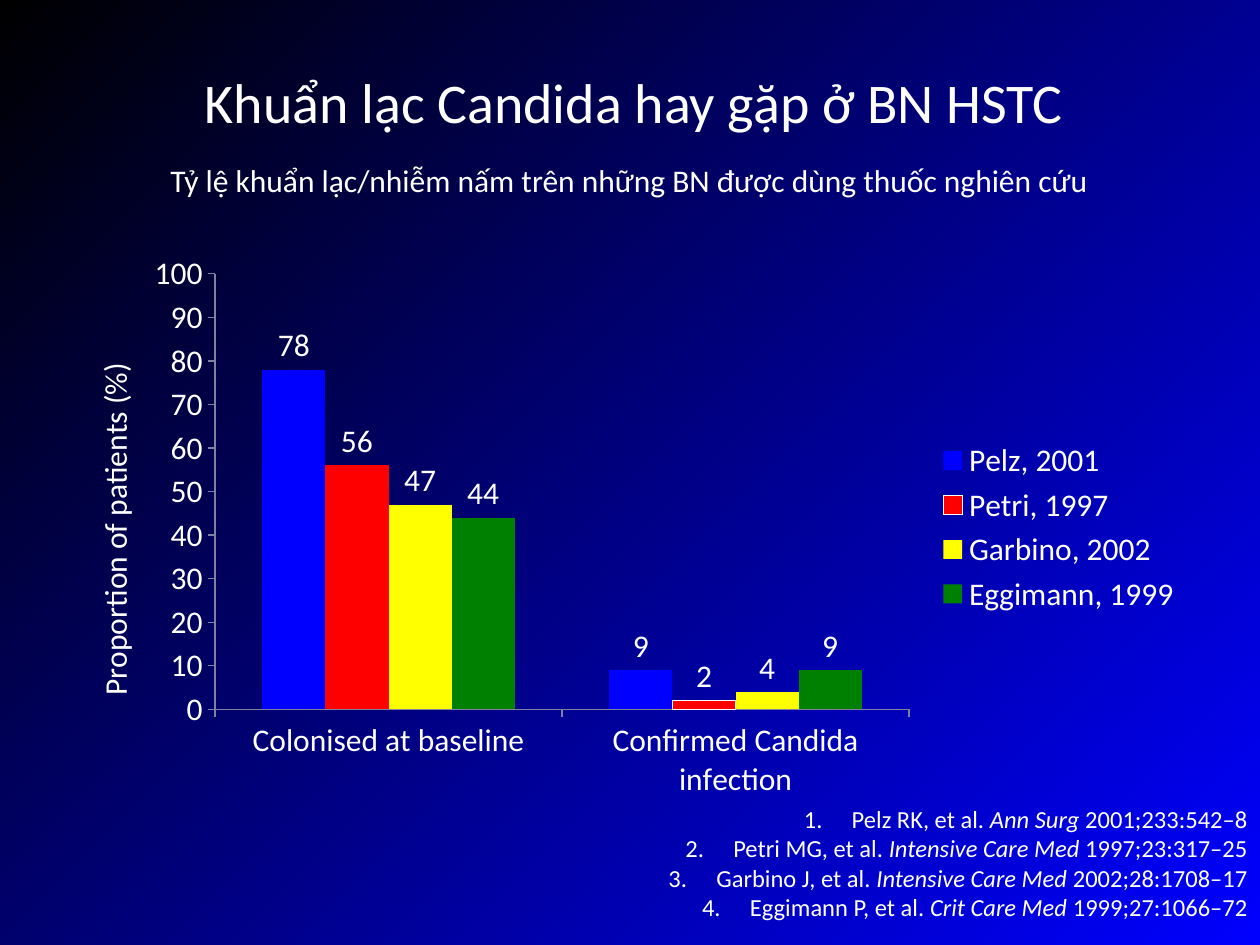
"""Build a slide on Candida colonisation with a clustered column chart."""
from lxml import etree
from pptx import Presentation
from pptx.chart import data
from pptx.dml import color
from pptx.enum import chart as ce, text as te
from pptx.oxml import ns
from pptx.util import Inches, Pt

WHITE = color.RGBColor(255, 255, 255)
BLACK = color.RGBColor(0, 0, 0)
BLUE = color.RGBColor(0, 0, 255)
RED = color.RGBColor(255, 0, 0)
YELLOW = color.RGBColor(255, 255, 0)
GREEN = color.RGBColor(0, 128, 0)
GREY = color.RGBColor(128, 128, 160)
FONT = "Calibri"
CATS = ["Colonised at baseline", "Confirmed Candida infection"]
STUDIES = [
    ("Pelz, 2001", (78, 9), BLUE),
    ("Petri, 1997", (56, 2), RED),
    ("Garbino, 2002", (47, 4), YELLOW),
    ("Eggimann, 1999", (44, 9), GREEN),
]
REFS = [
    ("Pelz RK, et al. ", "Ann Surg", " 2001;233:542–8"),
    ("Petri MG, et al. ", "Intensive Care Med", " 1997;23:317–25"),
    ("Garbino J, et al. ", "Intensive Care Med", " 2002;28:1708–17"),
    ("Eggimann P, et al. ", "Crit Care Med", " 1999;27:1066–72"),
]


def style(font, size=18):
    """Set the common white type."""
    font.name, font.size, font.bold = FONT, Pt(size), False
    font.color.rgb = WHITE


def put(para, words, size=18, align=te.PP_ALIGN.CENTER, italic=None):
    """Add a formatted run to a paragraph."""
    para.alignment = align
    run = para.add_run()
    run.text = words
    style(run.font, size)
    run.font.italic = italic


def place(shape, left, top, width, height):
    """Move and size a shape in inches."""
    shape.left, shape.top = Inches(left), Inches(top)
    shape.width, shape.height = Inches(width), Inches(height)


def add_box(slide, *area):
    """Add a wrapping text box and return its frame."""
    frame = slide.shapes.add_textbox(*map(Inches, area)).text_frame
    frame.word_wrap = True
    return frame


def paint(slide):
    """Spread blue from the lower right corner into black."""
    fill = slide.background.fill
    fill.gradient()
    for stop, rgb in zip(fill.gradient_stops, (BLUE, BLACK)):
        stop.color.rgb = rgb
    grad = slide.element.find(".//" + ns.qn("a:gradFill"))
    grad.remove(grad.find(ns.qn("a:lin")))
    shade = etree.SubElement(grad, ns.qn("a:path"), {"path": "circle"})
    etree.SubElement(shade, ns.qn("a:fillToRect"), l="100000", t="100000")


def add_title(slide):
    """Fill the title placeholder."""
    title = slide.shapes.title
    place(title, 0.18, 0.27, 9.71, 0.8)
    frame = title.text_frame
    frame.margin_left = frame.margin_right = 0
    frame.margin_top = frame.margin_bottom = 0
    frame.vertical_anchor = te.MSO_ANCHOR.BOTTOM
    put(frame.paragraphs[0], "Khuẩn lạc Candida hay gặp ở BN HSTC", 32)


def add_refs(slide):
    """Add the numbered references."""
    frame = add_box(slide, 1.81, 6.33, 8.19, 1.04)
    for i, ref in enumerate(REFS):
        para = frame.add_paragraph() if i else frame.paragraphs[0]
        for part, italic in zip(ref, (False, True, False)):
            put(para, part, 14, te.PP_ALIGN.RIGHT, italic)
        props = para._p.get_or_add_pPr()
        props.set("marL", str(Inches(0.38)))
        props.set("indent", str(-Inches(0.38)))
        etree.SubElement(props, ns.qn("a:buFont"), typeface="+mj-lt")
        etree.SubElement(props, ns.qn("a:buAutoNum"), type="arabicPeriod")


def fix(node, index, **marks):
    """Give a chart part a manual layout."""
    for old in node.findall(ns.qn("c:layout")):
        node.remove(old)
    layout = etree.Element(ns.qn("c:layout"))
    node.insert(index, layout)
    manual = etree.SubElement(layout, ns.qn("c:manualLayout"))
    for key, val in marks.items():
        etree.SubElement(manual, ns.qn("c:" + key), val=str(val))


def set_axes(chart):
    """Format both axes and the value title."""
    for axis in (chart.category_axis, chart.value_axis):
        axis.has_major_gridlines = False
        axis.major_tick_mark = ce.XL_TICK_MARK.OUTSIDE
        axis.format.line.color.rgb = GREY
        style(axis.tick_labels.font)
    axis = chart.value_axis
    axis.minimum_scale, axis.maximum_scale, axis.major_unit = 0, 100, 10
    para = axis.axis_title.text_frame.paragraphs[0]
    put(para, "Proportion of patients (%)")
    fix(axis.axis_title._element, 1, xMode="edge", yMode="edge", x=0.03, y=0.2)


def set_bars(plot):
    """Colour and label each study."""
    plot.gap_width, plot.overlap, plot.vary_by_categories = 150, 0, False
    for bars, (_, _, rgb) in zip(plot.series, STUDIES):
        bars.format.fill.solid()
        bars.format.fill.fore_color.rgb = rgb
        bars.invert_if_negative = False
        labels = bars.data_labels
        labels.show_value = True
        labels.number_format, labels.number_format_is_linked = "0", False
        labels.position = ce.XL_LABEL_POSITION.OUTSIDE_END
        style(labels.font)
    petri = plot.series[1]
    petri.format.line.color.rgb = WHITE
    point = petri.points[0].format
    point.fill.solid()
    point.fill.fore_color.rgb = RED
    point.line.fill.background()


def add_chart(slide):
    """Add the chart of the four studies."""
    table = data.CategoryChartData(number_format="0")
    table.categories = CATS
    for name, vals, _ in STUDIES:
        table.add_series(name, vals)
    area = map(Inches, (0.42, 1.94, 9.06, 4.49))
    kind = ce.XL_CHART_TYPE.COLUMN_CLUSTERED
    chart = slide.shapes.add_chart(kind, *area, table).chart
    style(chart.font)
    chart.has_title = False
    chart.has_legend = True
    chart.legend.position = ce.XL_LEGEND_POSITION.RIGHT
    chart.legend.include_in_layout = False
    style(chart.legend.font)
    set_axes(chart)
    set_bars(chart.plots[0])
    field = chart._chartSpace.find(".//" + ns.qn("c:plotArea"))
    fix(field, 0, layoutTarget="inner", xMode="edge", yMode="edge",
        x=0.142, y=0.052, w=0.608, h=0.77)


def main():
    """Build and save the slide."""
    deck = Presentation()
    deck.slide_width, deck.slide_height = Inches(10), Inches(7.5)
    slide = deck.slides.add_slide(deck.slide_layouts[5])
    paint(slide)
    add_title(slide)
    add_chart(slide)
    add_refs(slide)
    note = add_box(slide, 0.98, 1.23, 8.03, 0.4)
    put(note.paragraphs[0], "Tỷ lệ khuẩn lạc/nhiễm nấm trên những BN được dùng thuốc nghiên cứu")
    deck.save("out.pptx")


if __name__ == "__main__":
    main()
